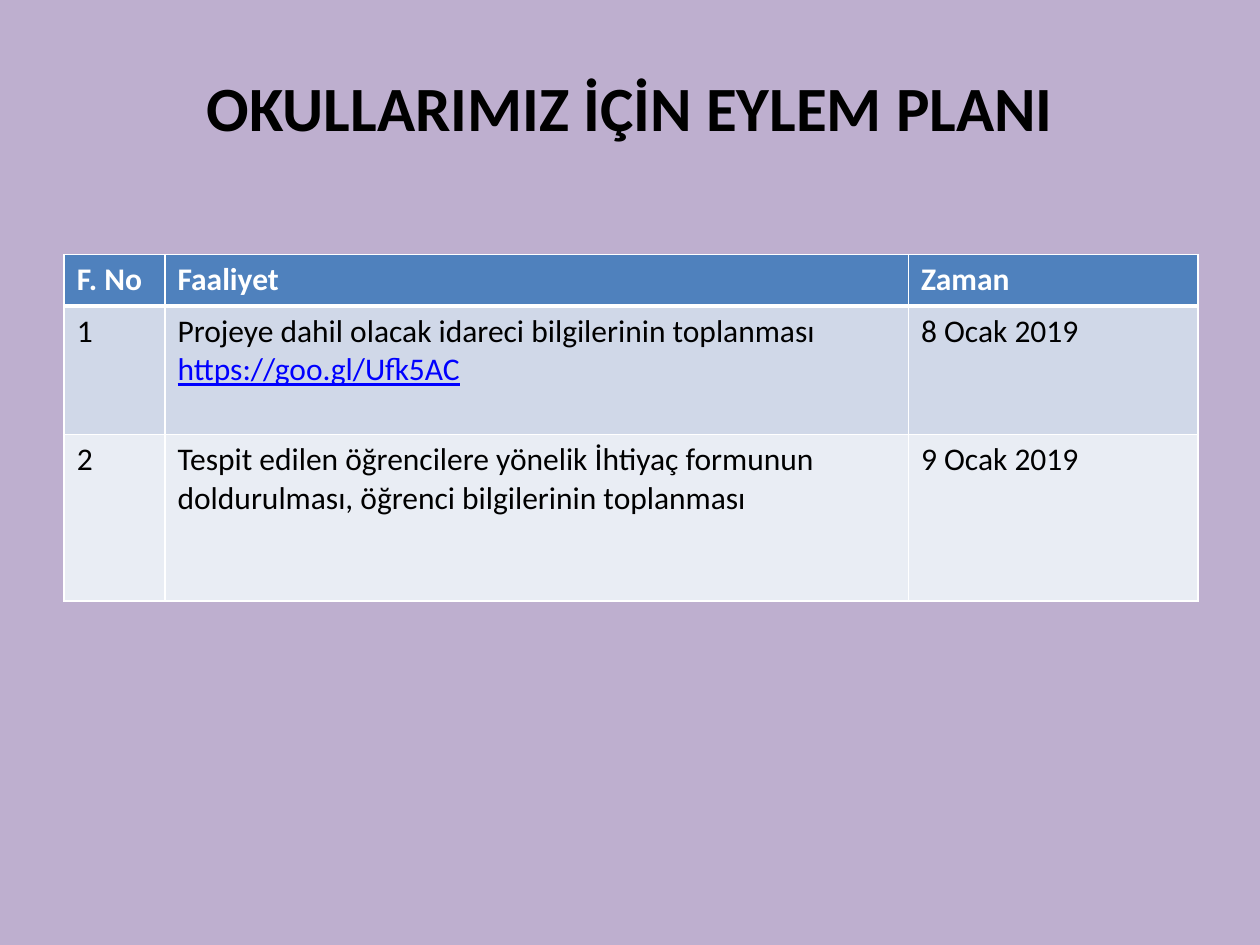
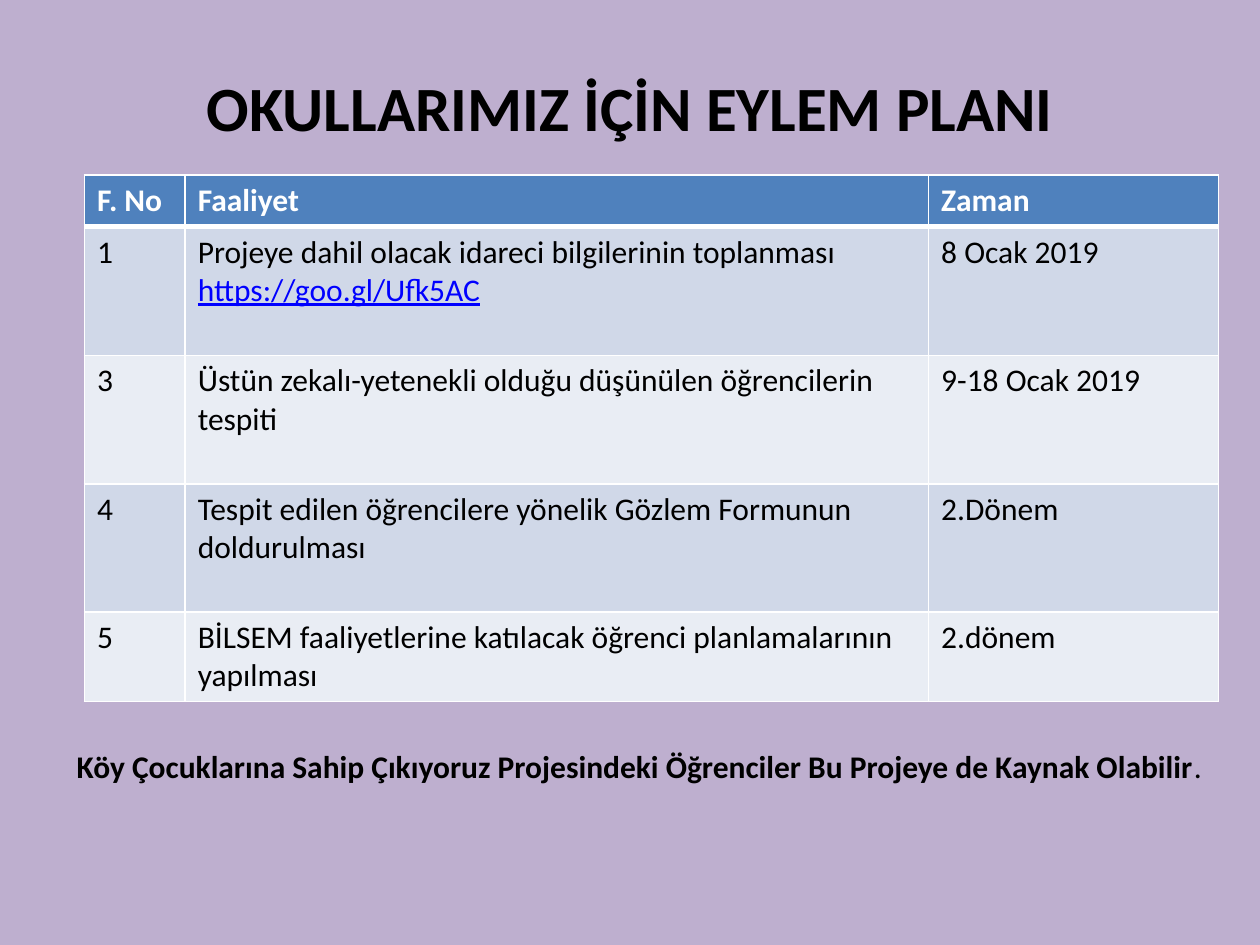
from lxml.etree import SubElement
from pptx import Presentation
from pptx.dml.color import RGBColor
from pptx.enum.text import MSO_ANCHOR, PP_ALIGN
from pptx.oxml.ns import qn
from pptx.util import Inches, Pt

FONT = "Calibri"
BACKGROUND, BLACK, WHITE, LINK = "BEAFCF", "000000", "FFFFFF", "0000FF"
HEADER_FILL, BAND_FILLS = "4F81BD", ("D0D8E8", "E9EDF4")

TITLE = "OKULLARIMIZ İÇİN EYLEM PLANI"
HEADER = ("F. No", "Faaliyet", "Zaman")
COLUMN_WIDTHS = (0.8, 5.9, 2.3)
HEADER_HEIGHT = 0.41

# Each activity: number, lines of the description, time, row height
MANAGER_DATA = ("1", ("Projeye dahil olacak idareci bilgilerinin toplanması",
                      "https://goo.gl/Ufk5AC"), "8 Ocak 2019", 1.02)
PLANS = [
    {
        "corner": (0.51, 2.02),
        "activities": [
            MANAGER_DATA,
            ("2", ("Tespit edilen öğrencilere yönelik İhtiyaç formunun "
                   "doldurulması, öğrenci bilgilerinin toplanması",), "9 Ocak 2019", 1.32),
        ],
        "note": None,
    },
    {
        "corner": (0.67, 1.39),
        "activities": [
            MANAGER_DATA,
            ("3", ("Üstün zekalı-yetenekli olduğu düşünülen öğrencilerin tespiti",),
             "9-18 Ocak 2019", 1.02),
            ("4", ("Tespit edilen öğrencilere yönelik Gözlem Formunun doldurulması",),
             "2.Dönem", 1.02),
            ("5", ("BİLSEM faaliyetlerine katılacak öğrenci planlamalarının yapılması",),
             "2.dönem", 0.71),
        ],
        "note": ("Köy Çocuklarına Sahip Çıkıyoruz Projesindeki Öğrenciler "
                 "Bu Projeye de Kaynak Olabilir", "."),
    },
]


def rgb(color):
    return RGBColor.from_string(color)


def add_run(paragraph, text, size=18, color=BLACK, bold=False, underline=False):
    run = paragraph.add_run()
    run.text = text
    font = run.font
    font.name, font.size = FONT, Pt(size)
    font.bold, font.underline = bold, underline
    font.color.rgb = rgb(color)


def add_text_box(slide, left, top, width, height, wrap=True):
    box = slide.shapes.add_textbox(*map(Inches, (left, top, width, height)))
    box.text_frame.word_wrap = wrap
    return box.text_frame


def add_title(slide):
    frame = add_text_box(slide, 0.5, 0.3, 9, 1.09)
    frame.vertical_anchor = MSO_ANCHOR.MIDDLE
    frame.paragraphs[0].alignment = PP_ALIGN.CENTER
    add_run(frame.paragraphs[0], TITLE, size=36, bold=True)


def set_borders(cell, top=1, bottom=1):
    properties = cell._tc.get_or_add_tcPr()
    for side, points in (("L", 1), ("R", 1), ("T", top), ("B", bottom)):
        line = SubElement(properties, qn(f"a:ln{side}"), w=str(Pt(points)))
        fill = SubElement(line, qn("a:solidFill"))
        SubElement(fill, qn("a:srgbClr"), val=WHITE)


def fill_cell(cell, lines, row):
    is_header = row == 0
    # The thick rule under the header belongs to both rows that meet there
    set_borders(cell, top=3 if row == 1 else 1, bottom=3 if is_header else 1)
    cell.fill.solid()
    cell.fill.fore_color.rgb = rgb(HEADER_FILL if is_header else BAND_FILLS[(row - 1) % 2])
    frame = cell.text_frame
    for index, line in enumerate(lines):
        paragraph = frame.add_paragraph() if index else frame.paragraphs[0]
        is_link = line.startswith("https://")
        color = WHITE if is_header else LINK if is_link else BLACK
        add_run(paragraph, line, color=color, bold=is_header, underline=is_link)


def add_plan_table(slide, corner, activities):
    heights = [HEADER_HEIGHT] + [activity[-1] for activity in activities]
    rows = [[(label,) for label in HEADER]]
    rows += [[(number,), lines, (time,)] for number, lines, time, _ in activities]
    extent = (*corner, sum(COLUMN_WIDTHS), sum(heights))
    table = slide.shapes.add_table(len(rows), len(HEADER), *map(Inches, extent)).table
    for column, width in zip(table.columns, COLUMN_WIDTHS):
        column.width = Inches(width)
    for row, (height, cells) in enumerate(zip(heights, rows)):
        table.rows[row].height = Inches(height)
        for column, lines in enumerate(cells):
            fill_cell(table.cell(row, column), lines, row)


def add_note(slide, statement, full_stop):
    paragraph = add_text_box(slide, 0.51, 5.88, 9.2, 0.4, wrap=False).paragraphs[0]
    add_run(paragraph, statement, bold=True)
    add_run(paragraph, full_stop)


def main():
    deck = Presentation()
    deck.slide_width, deck.slide_height = Inches(10), Inches(7.5)
    for plan in PLANS:
        slide = deck.slides.add_slide(deck.slide_layouts[6])
        slide.background.fill.solid()
        slide.background.fill.fore_color.rgb = rgb(BACKGROUND)
        add_title(slide)
        add_plan_table(slide, plan["corner"], plan["activities"])
        if plan["note"]:
            add_note(slide, *plan["note"])
    deck.save("out.pptx")


if __name__ == "__main__":
    main()
